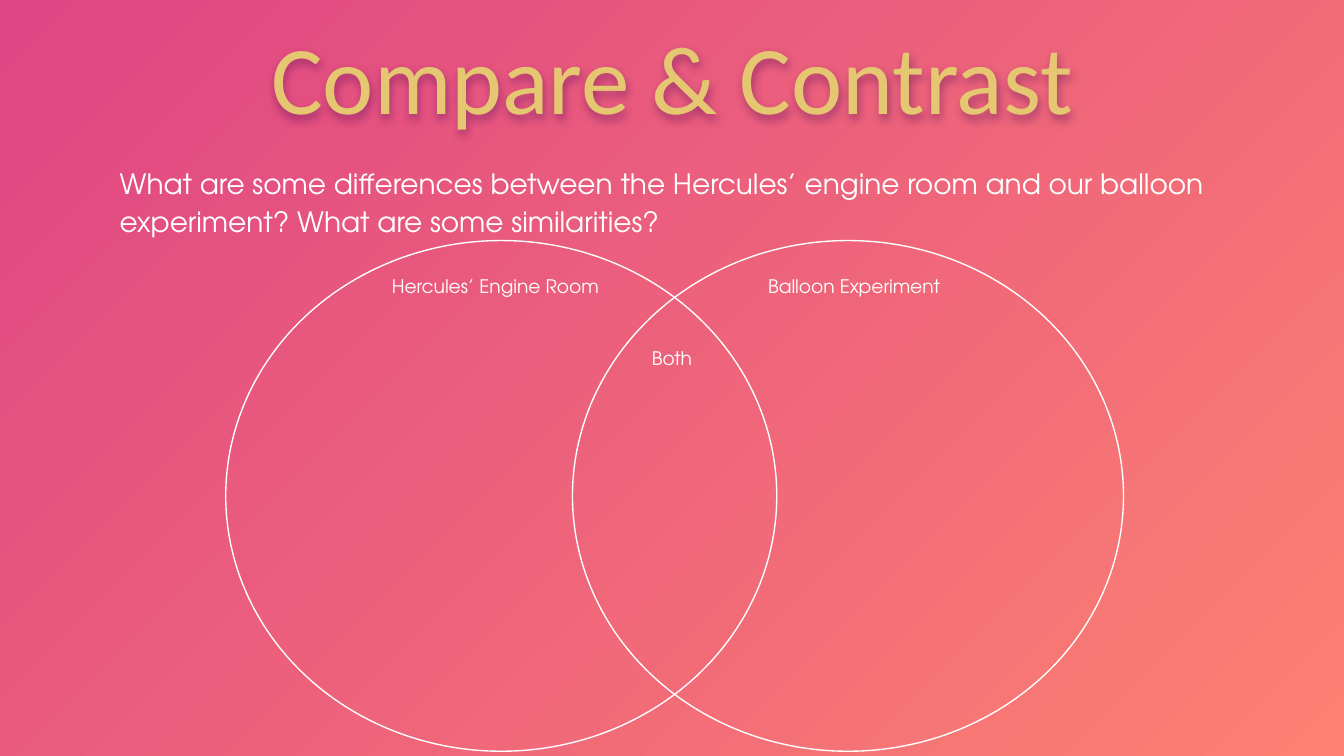
import pptx
import pptx.dml.color
import pptx.enum.shapes
import pptx.enum.text
import pptx.oxml
import pptx.oxml.ns
import pptx.util
from pptx.dml.color import RGBColor
from pptx.util import Inches

CORAL = RGBColor(0xFC, 0x81, 0x72)
PINK = RGBColor(0xDF, 0x45, 0x84)
GOLD = RGBColor(0xE5, 0xC7, 0x71)
WHITE = RGBColor(0xFF, 0xFF, 0xFF)
PLUM = RGBColor(0x40, 0x00, 0x50)
BODY_FONT = "TeX Gyre Adventor"
ALIGN = pptx.enum.text.PP_ALIGN
ANCHOR = pptx.enum.text.MSO_ANCHOR


def paint_background(slide):
    """Radial gradient spreading from the bottom right corner."""
    fill = slide.background.fill
    fill.gradient()
    for stop, position, color in zip(fill.gradient_stops, (0, 1), (CORAL, PINK)):
        stop.position = position
        stop.color.rgb = color
    gradient = slide.element.find(".//" + pptx.oxml.ns.qn("a:gradFill"))
    gradient.replace(
        gradient.find(pptx.oxml.ns.qn("a:lin")),
        pptx.oxml.parse_xml(
            f'<a:path {pptx.oxml.ns.nsdecls("a")} path="circle">'
            '<a:fillToRect l="100000" t="100000"/></a:path>'
        ),
    )


def add_text(slide, box, text, size, font=BODY_FONT, color=WHITE,
             align=ALIGN.CENTER, anchor=ANCHOR.TOP, spacing=None, inset=0):
    label = slide.shapes.add_textbox(*map(Inches, box))
    frame = label.text_frame
    frame.word_wrap = True
    frame.vertical_anchor = anchor
    frame.margin_left = frame.margin_right = Inches(inset)
    frame.margin_top = frame.margin_bottom = Inches(inset)
    paragraph = frame.paragraphs[0]
    paragraph.alignment = align
    paragraph.line_spacing = spacing
    run = paragraph.add_run()
    run.text = text
    run.font.size = pptx.util.Pt(size)
    run.font.name = font
    run.font.color.rgb = color
    return label


def add_heading(slide, box):
    """Gold title with a soft shadow, and the question below it."""
    left, top, width, height = box
    title = add_text(slide, (left + 0.18, top, width - 0.79, 0.79),
                     "Compare & Contrast", 52, "Calibri", GOLD,
                     anchor=ANCHOR.BOTTOM, spacing=0.9)
    title.element.spPr.append(pptx.oxml.parse_xml(
        f'<a:effectLst {pptx.oxml.ns.nsdecls("a")}>'
        '<a:outerShdw blurRad="63500" dist="25400" dir="5400000" algn="t" rotWithShape="0">'
        f'<a:srgbClr val="{PLUM}"><a:alpha val="40000"/></a:srgbClr>'
        '</a:outerShdw></a:effectLst>'
    ))
    add_text(slide, (left, top + 0.98, width, height - 0.98),
             "What are some differences between the Hercules’ engine room and our "
             "balloon experiment? What are some similarities?",
             15, align=ALIGN.LEFT, spacing=1.15)


def add_venn(slide, box):
    """Two overlapping outlined circles with a label for each area."""
    left, top, width, height = box
    circle_width = 4.1
    for circle_left in (left, left + width - circle_width):
        circle = slide.shapes.add_shape(
            pptx.enum.shapes.MSO_SHAPE.OVAL,
            *map(Inches, (circle_left, top, circle_width, height)))
        circle.shadow.inherit = False
        circle.fill.background()
        circle.line.color.rgb = WHITE
        circle.line.width = pptx.util.Pt(0.75)

    # Label text, offset from the diagram's corner, and width
    labels = [
        ("Hercules’ Engine Room", 1.1, 0.17, 1.81),
        ("Balloon Experiment", 3.86, 0.17, 1.63),
        ("Both", 3.03, 0.71, 0.58),
    ]
    for text, dx, dy, label_width in labels:
        add_text(slide, (left + dx, top + dy, label_width, 0.37), text, 10, inset=0.1)


def main():
    presentation = pptx.Presentation()
    # Widescreen, 16:9
    presentation.slide_width = Inches(10)
    presentation.slide_height = presentation.slide_width * 9 // 16
    slide = presentation.slides.add_slide(presentation.slide_layouts[6])
    paint_background(slide)
    add_heading(slide, (0.89, 0.22, 8.65, 4.78))
    add_venn(slide, (1.68, 1.79, 6.68, 3.8))
    presentation.save("out.pptx")


if __name__ == "__main__":
    main()
